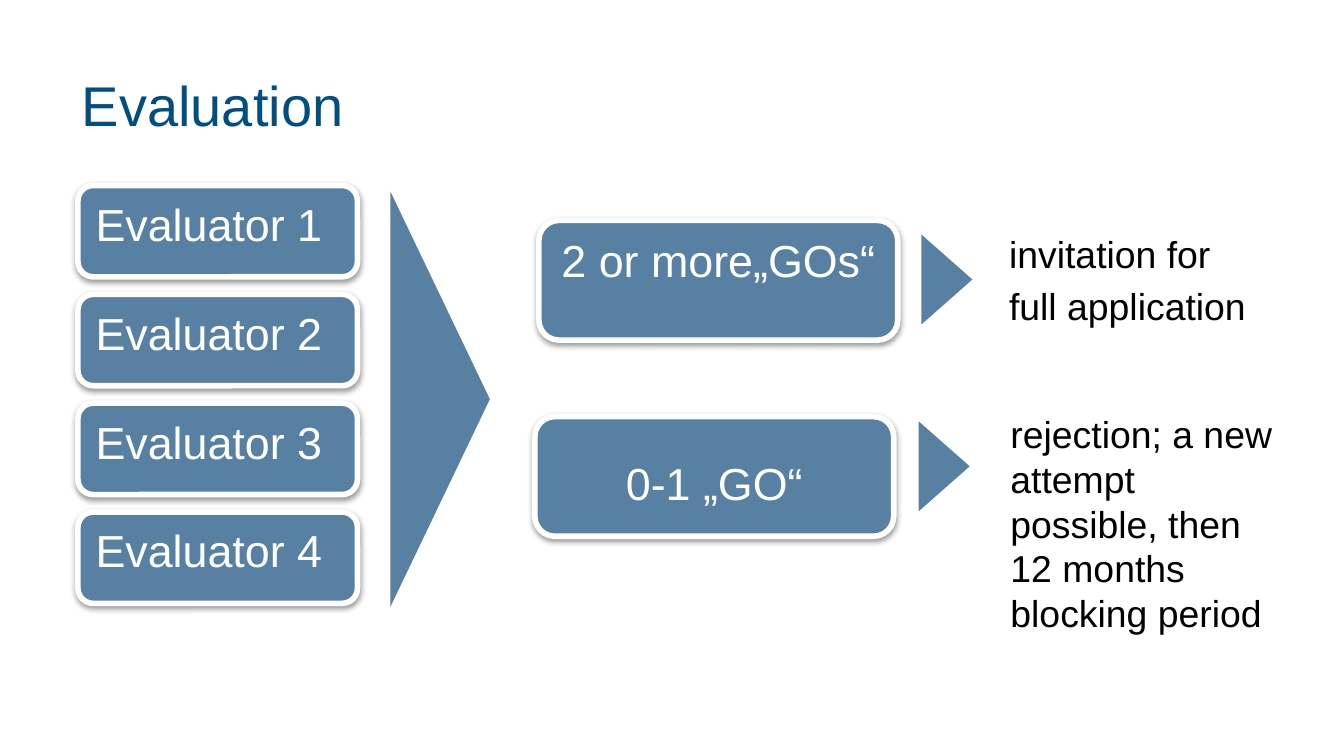
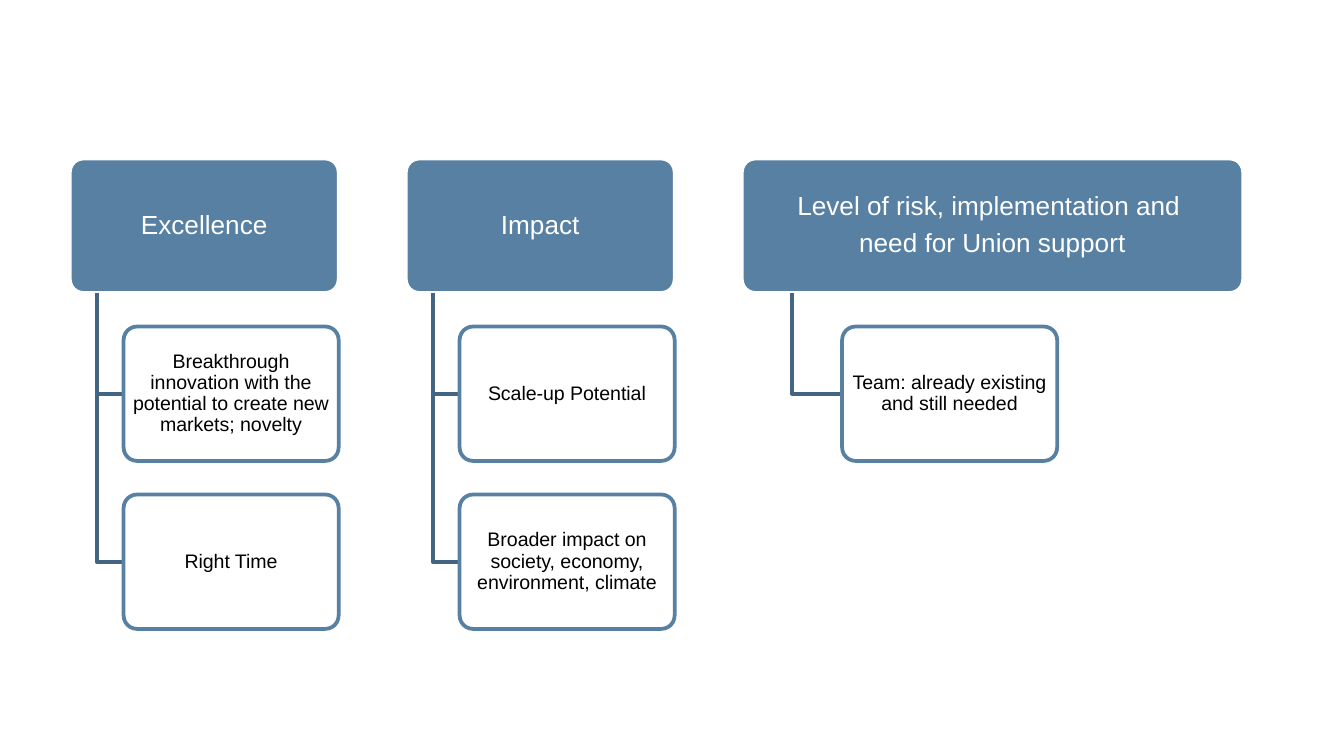
"""Build two slides: the evaluation flow and the evaluation criteria."""
from lxml import etree
from pptx import Presentation
from pptx.dml.color import RGBColor
from pptx.enum.shapes import MSO_SHAPE
from pptx.enum.text import MSO_ANCHOR, PP_ALIGN
from pptx.oxml.ns import qn
from pptx.util import Inches, Pt

ROUNDED, TRIANGLE = MSO_SHAPE.ROUNDED_RECTANGLE, MSO_SHAPE.ISOSCELES_TRIANGLE
LEFT, CENTER = PP_ALIGN.LEFT, PP_ALIGN.CENTER
TOP, MIDDLE = MSO_ANCHOR.TOP, MSO_ANCHOR.MIDDLE

FONT = "Arial"
COLORS = {
    "title": "004F80",
    "steel": "5780A3",
    "branch": "436581",
    "white": "FFFFFF",
    "black": "000000",
}


def write_text(shape, lines, size, color, align=LEFT, anchor=TOP,
               spacing=None, gap=0, insets=(0.1, 0.05)):
    frame = shape.text_frame
    frame.text = "\n".join(lines)
    frame.word_wrap = True
    frame.vertical_anchor = anchor
    frame.margin_left = frame.margin_right = Inches(insets[0])
    frame.margin_top = frame.margin_bottom = Inches(insets[1])
    for index, paragraph in enumerate(frame.paragraphs):
        paragraph.alignment = align
        paragraph.line_spacing = spacing
        paragraph.space_before = Pt(gap if index else 0)
        for run in paragraph.runs:
            run.font.name = FONT
            run.font.size = Pt(size)
            run.font.color.rgb = RGBColor.from_string(COLORS[color])


def add_block(slide, kind, bounds, fill, line=None, line_width=0, corner=None):
    shape = slide.shapes.add_shape(kind, *[Inches(value) for value in bounds])
    shape.shadow.inherit = False
    shape.fill.solid()
    shape.fill.fore_color.rgb = RGBColor.from_string(COLORS[fill])
    if line:
        shape.line.color.rgb = RGBColor.from_string(COLORS[line])
        shape.line.width = Pt(line_width)
    else:
        shape.line.fill.background()
    if corner:
        shape.adjustments[0] = corner
    return shape


presentation = Presentation()
presentation.slide_width = Inches(10)
presentation.slide_height = Inches(10) * 9 // 16
title_layout, blank_layout = (presentation.slide_layouts[index] for index in (5, 6))

slide = presentation.slides.add_slide(title_layout)
title = slide.shapes.title
title.left, title.top = Inches(0.51), Inches(0.39)
title.width, title.height = Inches(6.3), Inches(0.8)
write_text(title, ["Evaluation"], 30, "title", spacing=1.17)

flow_boxes = [
    (f"Evaluator {index + 1}", (0.58, 1.38 + 0.81 * index, 2.08, 0.68), LEFT, None)
    for index in range(4)
]
flow_boxes += [
    ("2 or more„GOs“", (4.01, 1.64, 2.67, 0.89), CENTER, None),
    ("0-1 „GO“", (3.98, 3.1, 2.67, 0.89), CENTER, 1.5),
]
for label, bounds, align, spacing in flow_boxes:
    box = add_block(slide, ROUNDED, bounds, "steel", "white", 3, 0.167)
    write_text(box, [label], 24, "white", align, spacing=spacing)
    effects = box._element.spPr.find(qn("a:effectLst"))
    shadow = etree.SubElement(
        effects, qn("a:outerShdw"), blurRad=str(Pt(3.1)), dist=str(Pt(1.6)),
        dir="5400000", algn="ctr", rotWithShape="0",
    )
    shadow_color = etree.SubElement(shadow, qn("a:srgbClr"), val=COLORS["black"])
    etree.SubElement(shadow_color, qn("a:alpha"), val="38000")

for bounds in [(1.73, 2.6, 3.09, 0.74), (6.71, 1.89, 0.67, 0.38), (6.69, 3.28, 0.67, 0.38)]:
    arrow = add_block(slide, TRIANGLE, bounds, "steel")
    arrow.rotation = 90

outcomes = [
    ((7.41, 1.67, 1.97, 0.84), ["invitation for", "full application"]),
    ((7.42, 3.01, 2.26, 1.45),
     ["rejection; a new attempt possible, then 12 months blocking period"]),
]
for bounds, lines in outcomes:
    outcome = slide.shapes.add_textbox(*[Inches(value) for value in bounds])
    write_text(outcome, lines, 20, "black", gap=4)

slide = presentation.slides.add_slide(blank_layout)
criteria = [
    (["Excellence"], 2,
     ["Breakthrough innovation with the potential to create new markets; novelty",
      "Right Time"]),
    (["Impact"], 2,
     ["Scale-up Potential",
      "Broader impact on society, economy, environment, climate"]),
    (["Level of risk, implementation and ", "need for Union support"], 3.73,
     ["Team: already existing and still needed"]),
]
header_top, row_height, row_gap, column_gap = 1.18, 1, 0.25, 0.5
header_bottom = header_top + row_height
left = 0.52
for heading, width, details in criteria:
    header = add_block(slide, ROUNDED, (left, header_top, width, row_height),
                       "steel", "white", 2, 0.1)
    write_text(header, heading, 14, "white", CENTER, MIDDLE, 0.9, 4.9, (0.03, 0.02))
    stem, detail_left = left + width / 10, left + width / 5
    for index, detail in enumerate(details):
        top = header_bottom + row_gap + index * (row_height + row_gap)
        center = top + row_height / 2
        builder = slide.shapes.build_freeform(Inches(stem), Inches(header_bottom))
        builder.add_line_segments(
            [(Inches(stem), Inches(center)), (Inches(detail_left), Inches(center))],
            close=False,
        )
        branch = builder.convert_to_shape()
        branch.shadow.inherit = False
        branch.fill.background()
        branch.line.color.rgb = RGBColor.from_string(COLORS["branch"])
        branch.line.width = Pt(2)
        box = add_block(slide, ROUNDED, (detail_left, top, 1.6, row_height),
                        "white", "steel", 2, 0.1)
        fill_color = box._element.spPr.find(qn("a:solidFill"))[0]
        etree.SubElement(fill_color, qn("a:alpha"), val="90000")
        write_text(box, [detail], 10.5, "black", CENTER, MIDDLE, 0.9, insets=(0.02, 0.02))
    left += width + column_gap

presentation.save("out.pptx")
